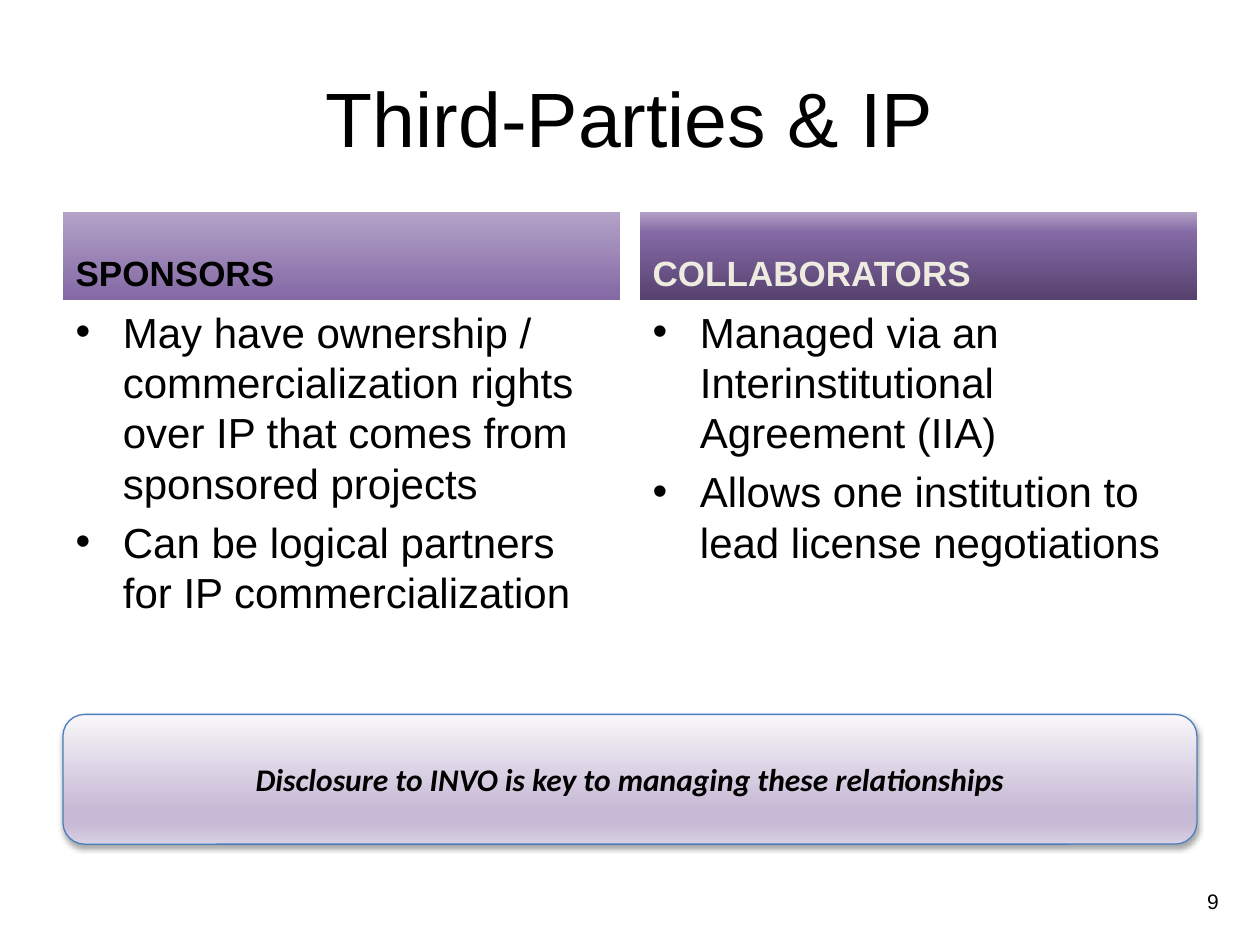
from dataclasses import dataclass

from pptx import Presentation
from pptx.dml.color import RGBColor
from pptx.enum.shapes import MSO_SHAPE
from pptx.enum.text import MSO_ANCHOR, PP_ALIGN
from pptx.oxml import parse_xml
from pptx.oxml.ns import nsdecls
from pptx.util import Inches, Pt


@dataclass(frozen=True)
class Theme:
    font: str = "Arial"
    callout_font: str = "Calibri"
    ink: str = "000000"
    pale_ink: str = "EEECE1"
    outline: str = "4B7EBC"
    title_size: int = 44
    header_size: int = 20
    bullet_size: int = 24
    callout_size: int = 18
    number_size: int = 12
    sponsor_stops: tuple = ((0, "8469A5"), (100, "B3A2C7"))
    collaborator_stops: tuple = ((0, "56426E"), (76, "8469A5"), (100, "B3A2C7"))
    callout_stops: tuple = ((0, "F9F7FA"), (74, "C6B9D5"), (83, "C6B9D5"), (100, "D9D0E3"))


THEME = Theme()
SLIDE_WIDTH, SLIDE_HEIGHT = 10, 7.5
MARGIN, GUTTER = 0.5, 0.16
CONTENT_WIDTH = SLIDE_WIDTH - 2 * MARGIN
COLUMN_WIDTH = (CONTENT_WIDTH - GUTTER) / 2
HEADER_TOP, HEADER_HEIGHT = 1.68, 0.7
LIST_TOP = HEADER_TOP + HEADER_HEIGHT
CONTENT_BOTTOM = 6.7
CALLOUT_HEIGHT = 1.03

COLUMNS = (
    ("SPONSORS", THEME.ink, THEME.sponsor_stops, (
        "May have ownership / commercialization rights over IP that comes from sponsored projects",
        "Can be logical partners for IP commercialization",
    )),
    ("COLLABORATORS", THEME.pale_ink, THEME.collaborator_stops, (
        "Managed via an Interinstitutional Agreement (IIA)",
        "Allows one institution to lead license negotiations",
    )),
)


def place(shape, left, top, width, height):
    shape.left, shape.top = Inches(left), Inches(top)
    shape.width, shape.height = Inches(width), Inches(height)


def write(paragraph, text, size, color=THEME.ink, font=THEME.font, bold=None, italic=None):
    run = paragraph.add_run()
    run.text = text
    run.font.name = font
    run.font.size = Pt(size)
    run.font.bold = bold
    run.font.italic = italic
    run.font.color.rgb = RGBColor.from_string(color)


def fill_gradient(shape, stops, angle):
    stop_xml = "".join(
        f'<a:gs pos="{share * 1000}"><a:srgbClr val="{color}"/></a:gs>' for share, color in stops
    )
    shape.fill.background()
    no_fill = shape.element.spPr.find("{*}noFill")
    gradient = parse_xml(
        f'<a:gradFill {nsdecls("a")} rotWithShape="1"><a:gsLst>{stop_xml}</a:gsLst>'
        f'<a:lin ang="{angle * 60000}" scaled="0"/></a:gradFill>'
    )
    shape.element.spPr.replace(no_fill, gradient)


def cast_shadow(shape, blur, distance, opacity):
    shape.element.spPr.append(parse_xml(
        f'<a:effectLst {nsdecls("a")}><a:outerShdw blurRad="{Pt(blur)}" dist="{Pt(distance)}" '
        f'dir="5400000" rotWithShape="0"><a:srgbClr val="000000">'
        f'<a:alpha val="{opacity * 1000}"/></a:srgbClr></a:outerShdw></a:effectLst>'
    ))


def add_title(slide, text):
    title = slide.shapes.title
    place(title, MARGIN, 0.3, CONTENT_WIDTH, 1.25)
    title.text_frame.vertical_anchor = MSO_ANCHOR.MIDDLE
    heading = title.text_frame.paragraphs[0]
    heading.alignment = PP_ALIGN.CENTER
    write(heading, text, THEME.title_size)


def add_header(header, left, text, color, stops):
    place(header, left, HEADER_TOP, COLUMN_WIDTH, HEADER_HEIGHT)
    fill_gradient(header, stops, 270)
    header.text_frame.vertical_anchor = MSO_ANCHOR.BOTTOM
    label = header.text_frame.paragraphs[0]
    label.space_before = Pt(0)
    write(label, text, THEME.header_size, color, bold=True)


def add_bullets(body, left, points):
    place(body, left, LIST_TOP, COLUMN_WIDTH, CONTENT_BOTTOM - LIST_TOP)
    frame = body.text_frame
    for index, point in enumerate(points):
        bullet = frame.add_paragraph() if index else frame.paragraphs[0]
        if index == 0:
            bullet.space_before = Pt(0)
        write(bullet, point, THEME.bullet_size)


def add_page_number(slide, number):
    corner = slide.shapes.add_textbox(Inches(9.12), Inches(6.95), Inches(0.65), Inches(0.4))
    corner.text_frame.word_wrap = True
    corner.text_frame.vertical_anchor = MSO_ANCHOR.MIDDLE
    digits = corner.text_frame.paragraphs[0]
    digits.alignment = PP_ALIGN.RIGHT
    write(digits, number, THEME.number_size)


def add_callout(slide, text):
    callout = slide.shapes.add_shape(
        MSO_SHAPE.ROUNDED_RECTANGLE, Inches(MARGIN), Inches(CONTENT_BOTTOM - CALLOUT_HEIGHT),
        Inches(CONTENT_WIDTH), Inches(CALLOUT_HEIGHT),
    )
    fill_gradient(callout, THEME.callout_stops, 90)
    callout.line.color.rgb = RGBColor.from_string(THEME.outline)
    callout.line.width = Pt(0.75)
    cast_shadow(callout, blur=3.1, distance=1.8, opacity=35)
    callout.text_frame.vertical_anchor = MSO_ANCHOR.MIDDLE
    message = callout.text_frame.paragraphs[0]
    message.alignment = PP_ALIGN.CENTER
    write(message, text, THEME.callout_size, font=THEME.callout_font, bold=True, italic=True)


def main():
    deck = Presentation()
    deck.slide_width, deck.slide_height = Inches(SLIDE_WIDTH), Inches(SLIDE_HEIGHT)
    slide = deck.slides.add_slide(deck.slide_layouts.get_by_name("Comparison"))
    add_title(slide, "Third-Parties & IP")
    for column, (heading, color, stops, points) in enumerate(COLUMNS):
        left = MARGIN + column * (COLUMN_WIDTH + GUTTER)
        add_header(slide.placeholders[1 + 2 * column], left, heading, color, stops)
        add_bullets(slide.placeholders[2 + 2 * column], left, points)
    add_page_number(slide, "9")
    add_callout(slide, "Disclosure to INVO is key to managing these relationships")
    deck.save("out.pptx")


if __name__ == "__main__":
    main()
